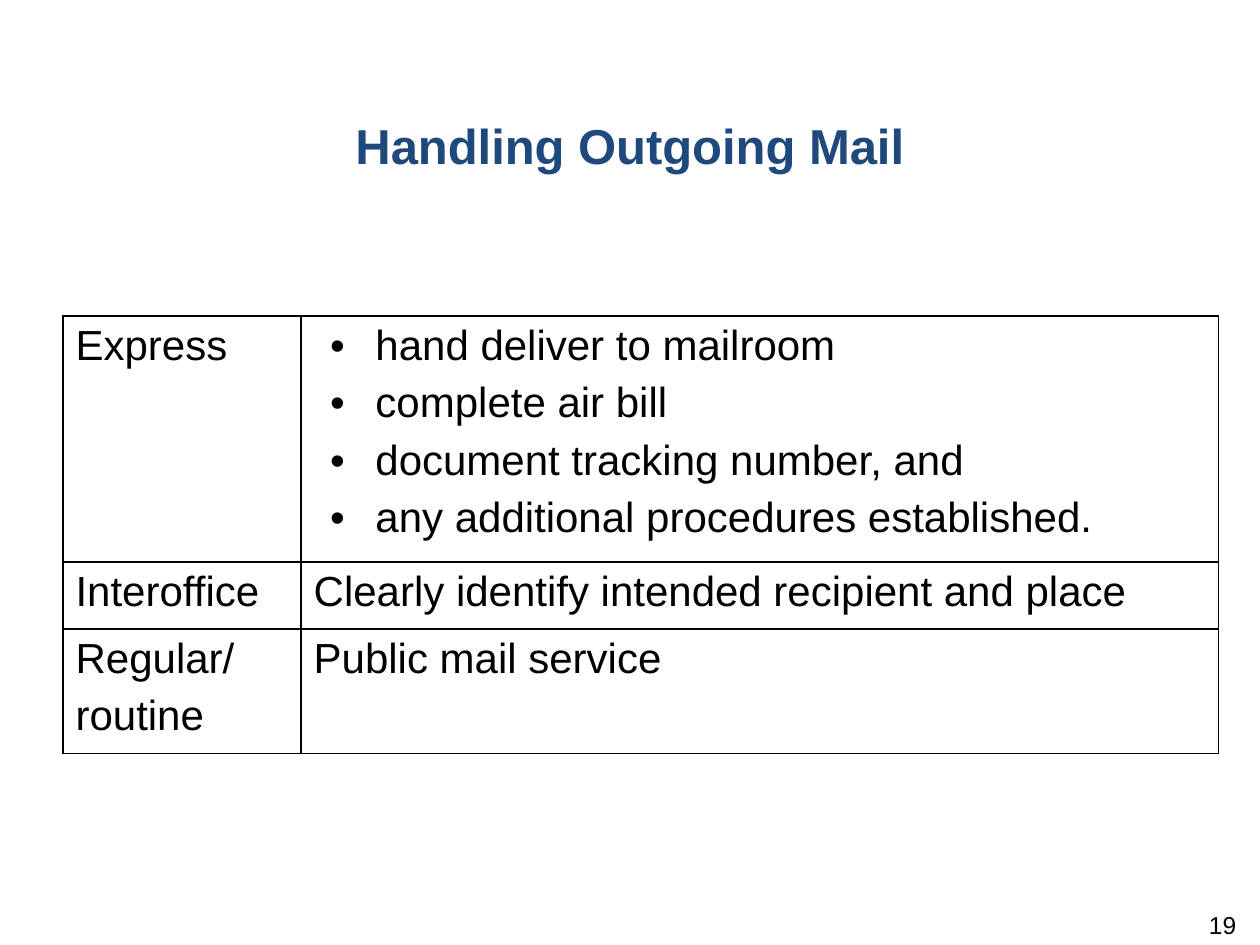
from lxml.etree import SubElement
from pptx import Presentation
from pptx.dml.color import RGBColor
from pptx.enum.text import MSO_ANCHOR, PP_ALIGN
from pptx.oxml.ns import qn
from pptx.util import Inches, Pt

# Content
TITLE = "Handling Outgoing Mail"
PAGE_NUMBER = "19"
MAIL_ROWS = [
    (["Express"], ["hand deliver to mailroom", "complete air bill",
                   "document tracking number, and",
                   "any additional procedures established."]),
    (["Interoffice"], ["Clearly identify intended recipient and place"]),
    (["Regular/", "routine"], ["Public mail service"]),
]
COLUMN_WIDTHS = [1.89, 7.28]
ROW_HEIGHTS = [1.89, 0.53, 0.99]
COLORS = {"title": "1F497D", "text": "000000", "border": "000000", "fill": "FFFFFF"}
FONT = "Arial"


def add_bullet(paragraph):
    properties = paragraph._p.get_or_add_pPr()
    properties.set("marL", str(Inches(0.49)))
    properties.set("indent", str(Inches(-0.36)))
    SubElement(properties, qn("a:buFont"), typeface=FONT)
    SubElement(properties, qn("a:buChar"), char="•")


def write_text(frame, lines, size=24, color="text", bold=False,
               align=PP_ALIGN.LEFT, margins=(0.08, 0.04, 0.08, 0.04), bullets=False):
    frame.word_wrap = True
    (frame.margin_left, frame.margin_top,
     frame.margin_right, frame.margin_bottom) = map(Inches, margins)
    for index, line in enumerate(lines):
        paragraph = frame.paragraphs[0] if index == 0 else frame.add_paragraph()
        paragraph.alignment = align
        paragraph.space_after = Pt(6)
        if bullets:
            add_bullet(paragraph)
        run = paragraph.add_run()
        run.text = line
        run.font.name = FONT
        run.font.size = Pt(size)
        run.font.bold = bold
        run.font.color.rgb = RGBColor.from_string(COLORS[color])


def style_cell(cell):
    cell.vertical_anchor = MSO_ANCHOR.TOP
    properties = cell._tc.get_or_add_tcPr()
    for side in ("lnL", "lnR", "lnT", "lnB"):
        line = SubElement(properties, qn(f"a:{side}"), w=str(Pt(1)))
        fill = SubElement(line, qn("a:solidFill"))
        SubElement(fill, qn("a:srgbClr"), val=COLORS["border"])
    cell.fill.solid()
    cell.fill.fore_color.rgb = RGBColor.from_string(COLORS["fill"])


presentation = Presentation()
presentation.slide_width, presentation.slide_height = Inches(10), Inches(7.5)
slide = presentation.slides.add_slide(presentation.slide_layouts[6])

# Title and page number
title = slide.shapes.add_textbox(Inches(0), Inches(0.87), Inches(10), Inches(1.19))
write_text(title.text_frame, [TITLE], size=28, color="title", bold=True,
           align=PP_ALIGN.CENTER, margins=(0.1, 0.05, 0.1, 0.05))
number = slide.shapes.add_textbox(Inches(7.58), Inches(7.22), Inches(2.33), Inches(0.4))
write_text(number.text_frame, [PAGE_NUMBER], size=14, align=PP_ALIGN.RIGHT,
           margins=(0.1, 0, 0.1, 0.05))

# Table of mail types
table = slide.shapes.add_table(
    len(MAIL_ROWS), len(COLUMN_WIDTHS), Inches(0.5), Inches(2.51),
    Inches(sum(COLUMN_WIDTHS)), Inches(sum(ROW_HEIGHTS))).table
table.first_row = table.horz_banding = False
for column, width in zip(table.columns, COLUMN_WIDTHS):
    column.width = Inches(width)
for row, height, contents in zip(table.rows, ROW_HEIGHTS, MAIL_ROWS):
    row.height = Inches(height)
    for column_index, (cell, lines) in enumerate(zip(row.cells, contents)):
        style_cell(cell)
        write_text(cell.text_frame, lines, bullets=column_index == 1 and len(lines) > 1)

presentation.save("out.pptx")
